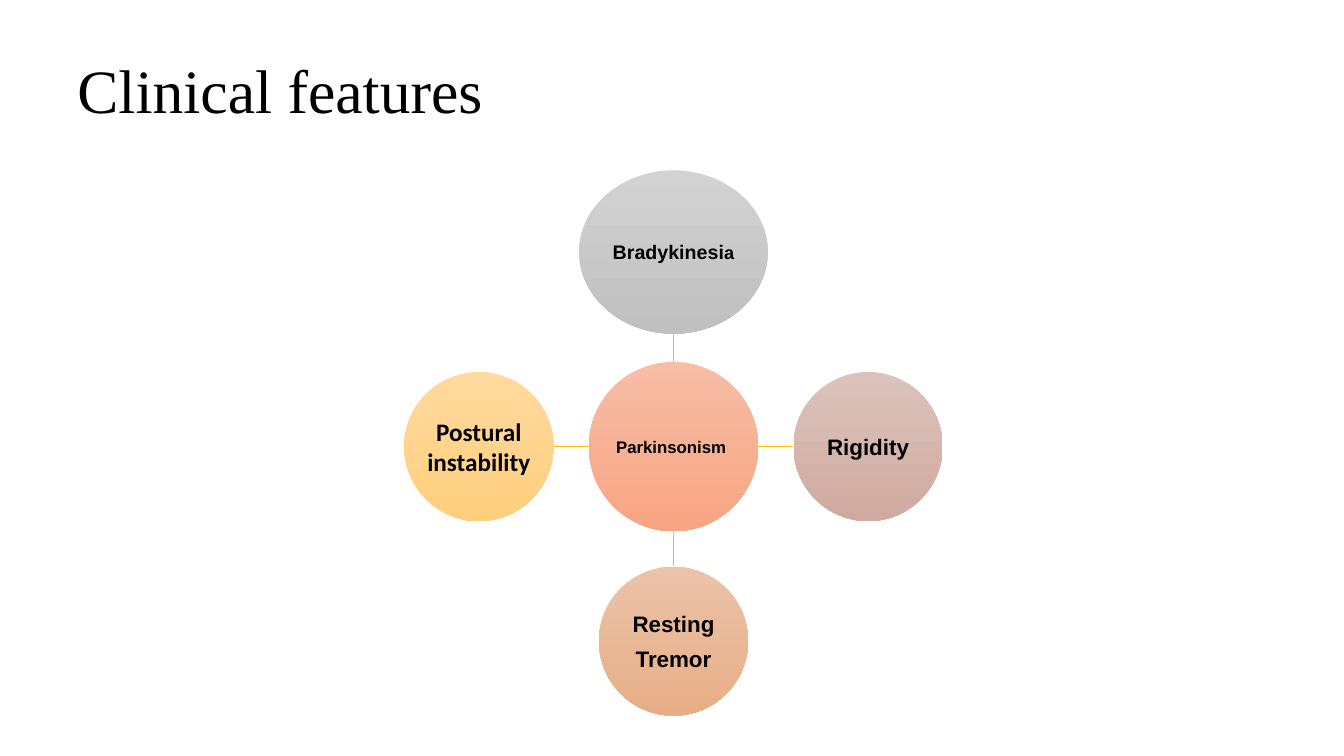
from dataclasses import dataclass

import pptx
import pptx.dml.color
import pptx.enum.shapes
import pptx.enum.text
import pptx.oxml.ns
import pptx.util
from lxml import etree

Inches = pptx.util.Inches
Pt = pptx.util.Pt
MIDDLE = pptx.enum.text.MSO_ANCHOR.MIDDLE


@dataclass(frozen=True)
class Theme:
    text: str = "000000"
    line: str = "FFC000"
    title_font: str = "Times New Roman"
    font: str = "Arial"
    alt_font: str = "Calibri"
    title: float = 44
    large: float = 18
    body: float = 16
    medium: float = 14
    medium_end: float = 13
    small: float = 12


THEME = Theme()
Run = tuple[str, float]


@dataclass(frozen=True)
class Bubble:
    paragraphs: list[list[Run]]
    top: str
    bottom: str
    dx: int = 0
    dy: int = 0
    width: float = 1.48
    height: float = 1.48
    font: str = THEME.font


CENTER_X, CENTER_Y, ORBIT = 6.68, 4.43, 1.93
HUB = Bubble([[("Parkinsonism ", THEME.small)]], "F7BDA5", "F8A582",
             width=1.68, height=1.68)
FEATURES = [
    Bubble([[("Bradykinesi", THEME.medium), ("a", THEME.medium_end)]],
           "D2D2D2", "C0C0C0", dy=-1, width=1.87, height=1.62),
    Bubble([[("Rigidity", THEME.body)]], "DBC3BB", "D0AAA1", dx=1),
    Bubble([[("Resting", THEME.body)], [("Tremor", THEME.body)]],
           "EBC3A8", "E7AE86", dy=1),
    Bubble([[("Postural instability", THEME.large)]], "FFD99E", "FFCF7C",
           dx=-1, font=THEME.alt_font),
]


def rgb(value: str) -> pptx.dml.color.RGBColor:
    return pptx.dml.color.RGBColor.from_string(value)


def add_text(p, text: str, *, size: float, font: str, bold: bool = False) -> None:
    r = p.add_run()
    r.text = text
    r.font.size = Pt(size)
    r.font.name = font
    r.font.bold = bold
    r.font.color.rgb = rgb(THEME.text)


def add_title(s, text: str) -> None:
    sp = s.shapes.add_textbox(Inches(0.67), Inches(0.3), Inches(12), Inches(1.25))
    tf = sp.text_frame
    tf.word_wrap = True
    tf.vertical_anchor = MIDDLE
    p = tf.paragraphs[0]
    p.line_spacing = 0.9
    add_text(p, text, size=THEME.title, font=THEME.title_font)


def add_bubble(s, b: Bubble) -> None:
    left = CENTER_X + b.dx * ORBIT - b.width / 2
    top = CENTER_Y + b.dy * ORBIT - b.height / 2
    sp = s.shapes.add_shape(pptx.enum.shapes.MSO_SHAPE.OVAL, Inches(left),
                            Inches(top), Inches(b.width), Inches(b.height))
    sp.shadow.inherit = False
    sp.line.fill.background()
    sp.fill.gradient()
    sp.fill.gradient_angle = 270
    for stop, color in zip(sp.fill.gradient_stops, (b.top, b.bottom)):
        stop.color.rgb = rgb(color)
    tf = sp.text_frame
    tf.word_wrap = True
    tf.vertical_anchor = MIDDLE
    tf.margin_left = tf.margin_right = tf.margin_top = tf.margin_bottom = Inches(0.01)
    for i, runs in enumerate(b.paragraphs):
        p = tf.add_paragraph() if i else tf.paragraphs[0]
        p.alignment = pptx.enum.text.PP_ALIGN.CENTER
        p.space_after = Pt(0.35 * runs[0][1])
        for text, size in runs:
            add_text(p, text, size=size, font=b.font, bold=True)


def add_spoke(s, b: Bubble) -> None:
    start = HUB.width / 2
    end = ORBIT - (b.width if b.dx else b.height) / 2
    cxn = s.shapes.add_connector(
        pptx.enum.shapes.MSO_CONNECTOR.STRAIGHT,
        Inches(CENTER_X + b.dx * start), Inches(CENTER_Y + b.dy * start),
        Inches(CENTER_X + b.dx * end), Inches(CENTER_Y + b.dy * end))
    cxn.line.color.rgb = rgb(THEME.line)
    cxn.line.width = Pt(1)
    etree.SubElement(cxn._element.spPr, pptx.oxml.ns.qn("a:effectLst"))


def main() -> None:
    prs = pptx.Presentation()
    prs.slide_width = Inches(13.33)
    prs.slide_height = Inches(7.5)
    s = prs.slides.add_slide(prs.slide_layouts[6])
    add_title(s, "Clinical features")
    add_bubble(s, HUB)
    for b in FEATURES:
        add_spoke(s, b)
        add_bubble(s, b)
    prs.save("out.pptx")


if __name__ == "__main__":
    main()
